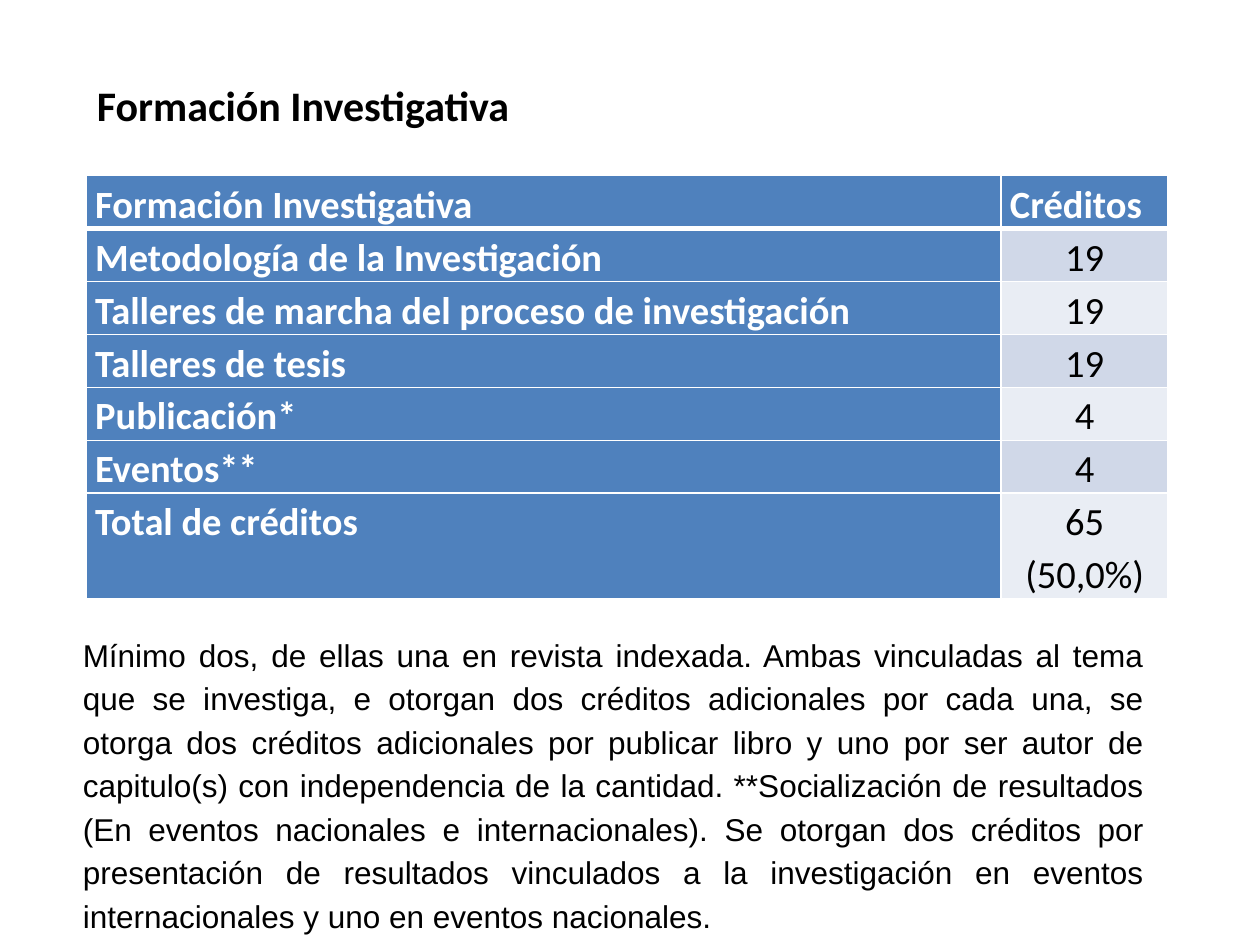
from dataclasses import dataclass

from lxml import etree
from pptx import Presentation
from pptx import util as u
from pptx.dml.color import RGBColor
from pptx.enum import text
from pptx.oxml.ns import qn

COLORS = {
    "ink": "000000",
    "white": "FFFFFF",
    "blue": "4F81BD",
    "band_dark": "D0D8E8",
    "band_light": "E9EDF4",
}
ROW_HEIGHT = u.Cm(1.03)
COLUMN_WIDTHS = (u.Cm(18.44), u.Cm(3.37))
HEADING = "Formación Investigativa"
NOTE = (
    "Mínimo dos, de ellas una en revista indexada. Ambas vinculadas al tema que se "
    "investiga, e otorgan dos créditos adicionales por cada una, se otorga dos créditos "
    "adicionales por publicar libro y uno por ser autor de capitulo(s) con independencia "
    "de la cantidad. **Socialización de resultados (En eventos nacionales e "
    "internacionales). Se otorgan dos créditos por presentación de resultados vinculados "
    "a la investigación en eventos internacionales y uno en eventos nacionales."
)


@dataclass(frozen=True)
class Style:
    size: int
    font: str = "Calibri"
    color: str = "ink"
    bold: bool = False
    align: text.PP_ALIGN = text.PP_ALIGN.JUSTIFY
    space_after: int = 0
    line_spacing: float = 1.15


@dataclass(frozen=True)
class Activity:
    name: str
    credits: str
    anchor: text.MSO_ANCHOR = text.MSO_ANCHOR.TOP
    lines: int = 1


TITLE_STYLE = Style(24, bold=True, space_after=6)
LABEL_STYLE = Style(22, color="white", bold=True, line_spacing=1.13)
CREDIT_STYLE = Style(22, align=text.PP_ALIGN.CENTER, line_spacing=1.13)
NOTE_STYLE = Style(18, font="Arial", space_after=3)

ACTIVITIES = (
    Activity(HEADING, "Créditos"),
    Activity("Metodología de la Investigación", "19", text.MSO_ANCHOR.MIDDLE),
    Activity("Talleres de marcha del proceso de investigación", "19", text.MSO_ANCHOR.MIDDLE),
    Activity("Talleres de tesis", "19"),
    Activity("Publicación*", "4"),
    Activity("Eventos**", "4"),
    Activity("Total de créditos", "65 (50,0%)", lines=2),
)


def write(frame, wording: str, style: Style) -> None:
    frame.word_wrap = True
    frame.text = wording
    paragraph = frame.paragraphs[0]
    paragraph.alignment = style.align
    paragraph.line_spacing = style.line_spacing
    paragraph.space_before = u.Pt(0)
    paragraph.space_after = u.Pt(style.space_after)
    font = paragraph.runs[0].font
    font.name, font.size, font.bold = style.font, u.Pt(style.size), style.bold
    font.color.rgb = RGBColor.from_string(COLORS[style.color])


def add_borders(cell, top: int, bottom: int) -> None:
    """Draw white borders; top and bottom widths are in points."""
    properties = cell._tc.get_or_add_tcPr()
    for side, width in (("L", 1), ("R", 1), ("T", top), ("B", bottom)):
        line = etree.SubElement(properties, qn(f"a:ln{side}"), w=str(u.Pt(width)))
        fill = etree.SubElement(line, qn("a:solidFill"))
        etree.SubElement(fill, qn("a:srgbClr"), val=COLORS["white"])


def draw_cell(cell, wording: str, style: Style, fill: str, row: int,
              anchor: text.MSO_ANCHOR) -> None:
    cell.margin_left = cell.margin_right = u.Cm(0.18)
    cell.margin_top = cell.margin_bottom = 0
    cell.vertical_anchor = anchor
    add_borders(cell, top=3 if row == 1 else 1, bottom=3 if row == 0 else 1)
    cell.fill.solid()
    cell.fill.fore_color.rgb = RGBColor.from_string(COLORS[fill])
    write(cell.text_frame, wording, style)


def draw_credits(slide) -> None:
    height = ROW_HEIGHT * sum(activity.lines for activity in ACTIVITIES)
    table = slide.shapes.add_table(
        len(ACTIVITIES), len(COLUMN_WIDTHS),
        u.Cm(1.74), u.Cm(3.54), sum(COLUMN_WIDTHS), height).table
    for column, width in zip(table.columns, COLUMN_WIDTHS):
        column.width = width
    for row, activity in enumerate(ACTIVITIES):
        table.rows[row].height = ROW_HEIGHT * activity.lines
        draw_cell(table.cell(row, 0), activity.name, LABEL_STYLE, "blue", row, activity.anchor)
        if row == 0:
            style, fill = LABEL_STYLE, "blue"
        else:
            style, fill = CREDIT_STYLE, "band_dark" if row % 2 else "band_light"
        draw_cell(table.cell(row, 1), activity.credits, style, fill, row, text.MSO_ANCHOR.TOP)


def main() -> None:
    presentation = Presentation()
    presentation.slide_width, presentation.slide_height = u.Cm(25.4), u.Cm(19.05)
    slide = presentation.slides.add_slide(presentation.slide_layouts[5])

    title = slide.shapes.title
    title.left, title.top, title.width, title.height = (
        u.Cm(1.7), u.Cm(1.32), u.Cm(21.84), u.Cm(1.37))
    write(title.text_frame, HEADING, TITLE_STYLE)
    title.text_frame.vertical_anchor = text.MSO_ANCHOR.TOP
    title.text_frame.auto_size = text.MSO_AUTO_SIZE.NONE

    draw_credits(slide)

    note = slide.shapes.add_textbox(u.Cm(1.42), u.Cm(12.58), u.Cm(22.4), u.Cm(6.45))
    write(note.text_frame, NOTE, NOTE_STYLE)
    note.text_frame.margin_right = u.Cm(0.76)

    presentation.save("out.pptx")


if __name__ == "__main__":
    main()
